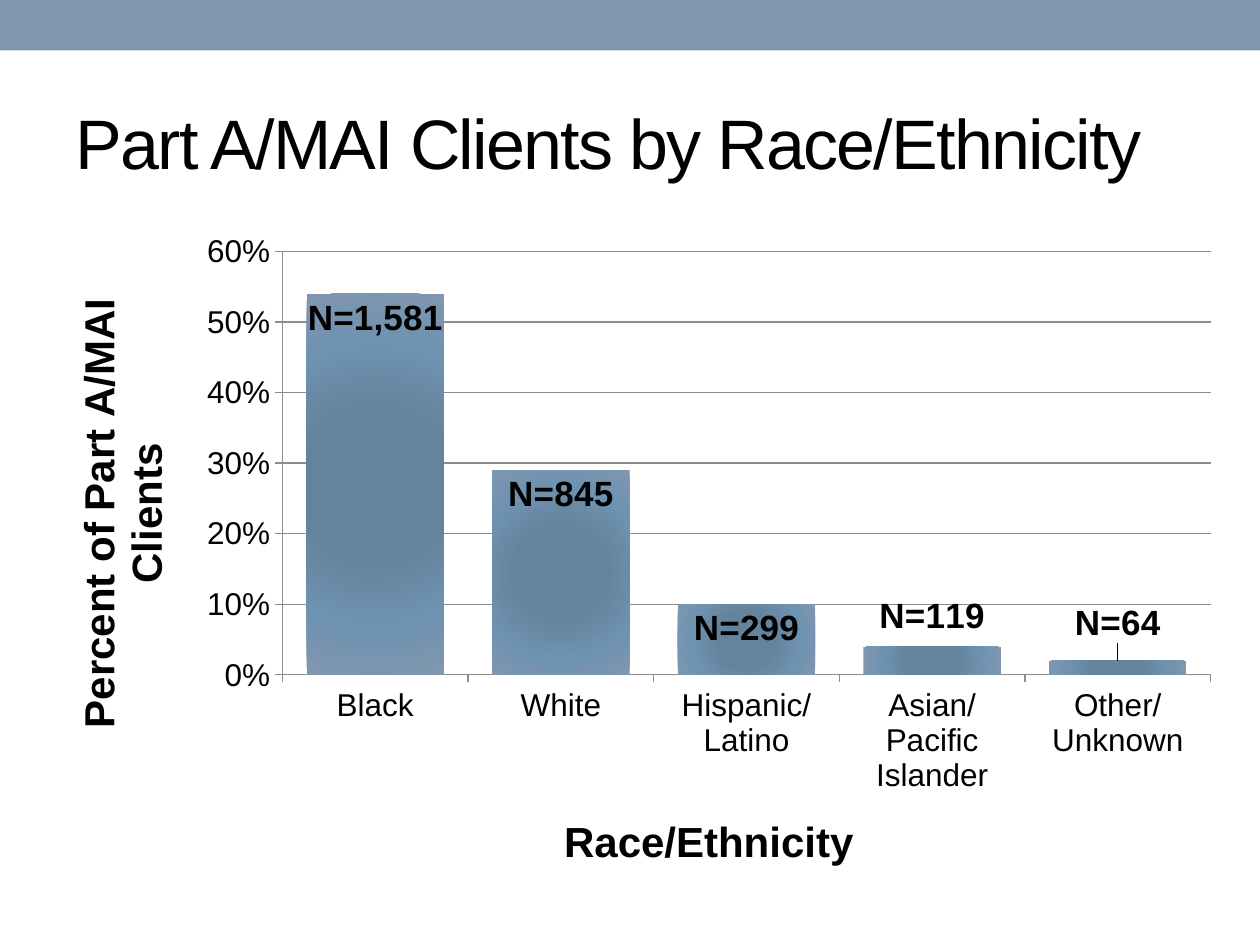
"""Build a slide with a column chart of Part A/MAI clients by race/ethnicity."""
from dataclasses import dataclass

from lxml.etree import SubElement
from pptx import Presentation
from pptx.chart.data import CategoryChartData
from pptx.dml.color import RGBColor
from pptx.enum.chart import XL_CHART_TYPE as ChartType
from pptx.enum.chart import XL_LABEL_POSITION as LabelPosition
from pptx.enum.chart import XL_TICK_MARK as TickMark
from pptx.enum.shapes import MSO_SHAPE as Shape
from pptx.enum.text import MSO_ANCHOR as Anchor
from pptx.enum.text import PP_ALIGN as Align
from pptx.oxml import parse_xml
from pptx.oxml.ns import nsdecls, qn
from pptx.util import Pt

TITLE = "Part A/MAI Clients by Race/Ethnicity"
CATEGORY_TITLE = "Race/Ethnicity"
VALUE_TITLE = "Percent of Part A/MAI Clients"
GROUPS = [
    ("Black", 0.54, "N=1,581", 0),
    ("White", 0.29, "N=845", 0),
    ("Hispanic/Latino", 0.10, "N=299", 0),
    ("Asian/Pacific Islander", 0.04, "N=119", -31),
    ("Other/Unknown", 0.02, "N=64", -35),
]
GRADIENT = [(0, "64839C"), (35, "64839C"), (70, "6E92B1"), (100, "8096AE")]
CHART_WIDTH, CHART_HEIGHT = 681, 389
PLOT = {"x": 137.4, "y": 17.7, "w": 530.4, "h": 242}
CATEGORY_TITLE_AT = {"x": 294, "y": 335}
VALUE_TITLE_AT = {"x": 12.5, "y": 40.5}


@dataclass(frozen=True)
class Theme:
    font: str = "Arial"
    text: RGBColor = RGBColor(0, 0, 0)
    band: RGBColor = RGBColor(0x7E, 0x97, 0xAD)
    line: RGBColor = RGBColor(0x8C, 0x8C, 0x8C)
    title: int = 40
    axis_title: int = 24
    label: int = 20
    axis: int = 18


THEME = Theme()


def style(font, size, bold=False):
    font.name = THEME.font
    font.size = Pt(size)
    font.bold = bold
    font.color.rgb = THEME.text


def add_text(text_frame, text, size, bold=False):
    run = text_frame.paragraphs[0].add_run()
    run.text = text
    style(run.font, size, bold)
    return run


def place(parent, index, box, **modes):
    for old in parent.findall(qn("c:layout")):
        parent.remove(old)
    layout = parse_xml(f"<c:layout {nsdecls('c')}/>")
    manual = SubElement(layout, qn("c:manualLayout"))
    extents = {"x": CHART_WIDTH, "w": CHART_WIDTH, "y": CHART_HEIGHT, "h": CHART_HEIGHT}
    fractions = {name: length / extents[name] for name, length in box.items()}
    for name, value in {**modes, **fractions}.items():
        SubElement(manual, qn(f"c:{name}")).set("val", str(value))
    parent.insert(index, layout)


def fill_radially(series):
    series.format.fill.solid()
    properties = series.format.fill._xPr
    properties.remove(properties.find(qn("a:solidFill")))
    stops = "".join(
        f'<a:gs pos="{position * 1000}"><a:srgbClr val="{color}"/></a:gs>'
        for position, color in GRADIENT
    )
    properties.insert(0, parse_xml(
        f'<a:gradFill {nsdecls("a")} rotWithShape="1"><a:gsLst>{stops}</a:gsLst>'
        '<a:path path="circle"><a:fillToRect l="50000" t="50000" r="50000" b="50000"/>'
        "</a:path></a:gradFill>"
    ))


def format_axis(axis, title, box):
    style(axis.tick_labels.font, THEME.axis)
    axis.major_tick_mark = TickMark.OUTSIDE
    axis.minor_tick_mark = TickMark.NONE
    axis.format.line.color.rgb = THEME.line
    axis.format.line.width = Pt(0.75)
    add_text(axis.axis_title.text_frame, title, THEME.axis_title, True)
    place(axis.axis_title._element, 1, box, xMode="edge", yMode="edge")


def add_labels(series):
    for index, (_, _, text, shift) in enumerate(GROUPS):
        label = series.points[index].data_label
        add_text(label.text_frame, text, THEME.label, True)
        label.position = LabelPosition.INSIDE_END
        if shift:
            place(label._get_or_add_dLbl(), 1, {"x": 0, "y": shift})
    series.data_labels._element.append(parse_xml(
        f'<c:extLst {nsdecls("c")}><c:ext uri="{{CE6537A1-D6FC-4f65-9D91-7224C49458BB}}" '
        'xmlns:c15="http://schemas.microsoft.com/office/drawing/2012/chart">'
        '<c15:showLeaderLines val="0"/></c:ext></c:extLst>'
    ))


def add_client_chart(slide):
    data = CategoryChartData(number_format="0%")
    data.categories = [group[0] for group in GROUPS]
    data.add_series("Series 1", [group[1] for group in GROUPS])
    chart = slide.shapes.add_chart(
        ChartType.COLUMN_STACKED, Pt(24), Pt(126), Pt(CHART_WIDTH), Pt(CHART_HEIGHT), data
    ).chart
    chart.has_legend = False
    chart.has_title = False
    style(chart.font, THEME.axis)

    plot = chart.plots[0]
    plot.gap_width = 35
    plot.overlap = 100
    plot.vary_by_categories = False
    fill_radially(plot.series[0])
    add_labels(plot.series[0])

    format_axis(chart.category_axis, CATEGORY_TITLE, CATEGORY_TITLE_AT)
    values = chart.value_axis
    format_axis(values, VALUE_TITLE, VALUE_TITLE_AT)
    values.minimum_scale = 0
    values.maximum_scale = 0.6
    values.major_unit = 0.1
    values.tick_labels.number_format = "0%"
    values.tick_labels.number_format_is_linked = False
    values.major_gridlines.format.line.color.rgb = THEME.line
    values.major_gridlines.format.line.width = Pt(0.75)

    plot_area = chart._chartSpace.chart.plotArea
    place(plot_area, 0, PLOT, layoutTarget="inner", xMode="edge", yMode="edge")


def main():
    presentation = Presentation()
    presentation.slide_width = Pt(720)
    presentation.slide_height = Pt(540)
    slide = presentation.slides.add_slide(presentation.slide_layouts[5])

    band = slide.shapes.add_shape(Shape.RECTANGLE, 0, 0, Pt(720), Pt(28.8))
    band.shadow.inherit = False
    band.fill.solid()
    band.fill.fore_color.rgb = THEME.band
    band.line.fill.background()

    title = slide.shapes.title
    title.left, title.top, title.width, title.height = Pt(36), Pt(42), Pt(666), Pt(78)
    title.text_frame.vertical_anchor = Anchor.MIDDLE
    title.text_frame.paragraphs[0].alignment = Align.LEFT
    run = add_text(title.text_frame, TITLE, THEME.title)
    run.font._element.set("spc", "-100")

    add_client_chart(slide)
    presentation.save("out.pptx")


if __name__ == "__main__":
    main()
